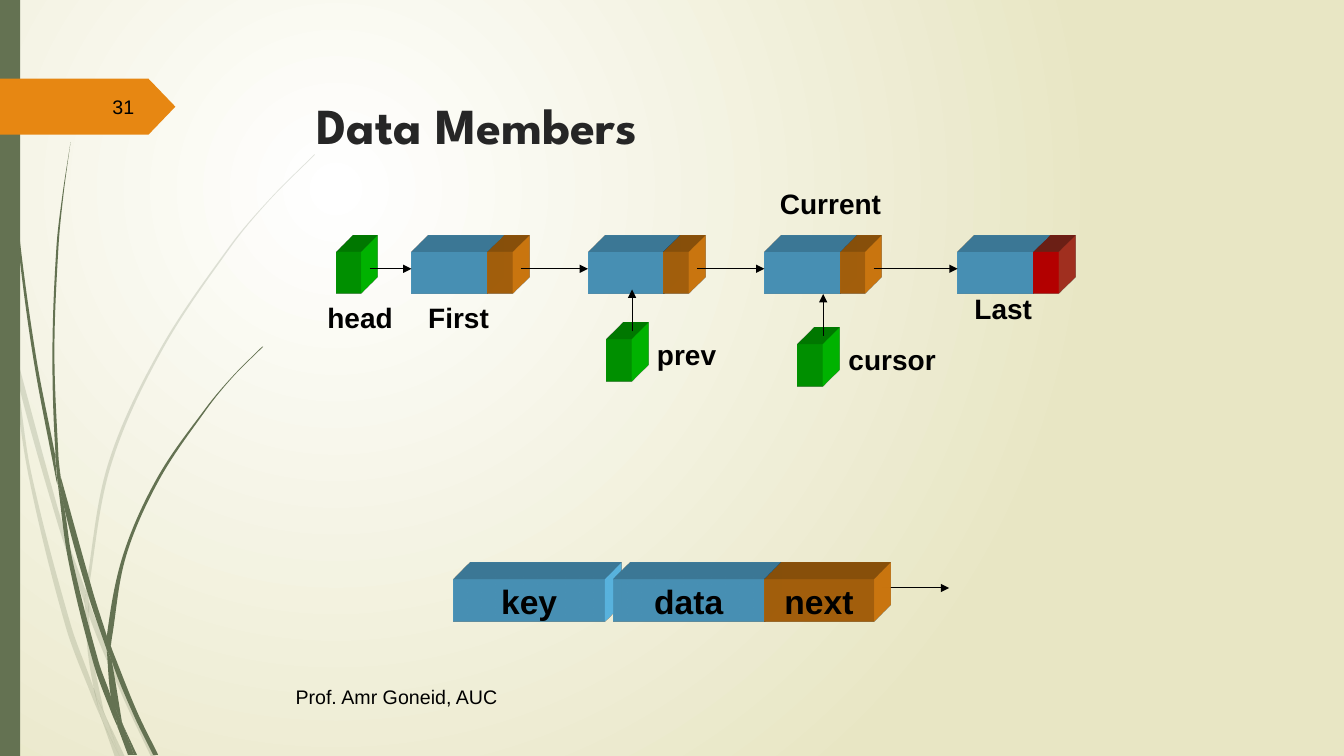
from dataclasses import dataclass
from math import dist

from lxml import etree
from pptx import Presentation
from pptx.dml.color import RGBColor
from pptx.enum.shapes import MSO_CONNECTOR, MSO_SHAPE
from pptx.enum.text import MSO_ANCHOR, MSO_AUTO_SIZE, PP_ALIGN
from pptx.oxml.ns import qn
from pptx.util import Pt

RECTANGLE, PENTAGON = MSO_SHAPE.RECTANGLE, MSO_SHAPE.PENTAGON
STRAIGHT = MSO_CONNECTOR.STRAIGHT
TOP, MIDDLE = MSO_ANCHOR.TOP, MSO_ANCHOR.MIDDLE
LEFT, CENTER, RIGHT = PP_ALIGN.LEFT, PP_ALIGN.CENTER, PP_ALIGN.RIGHT
NO_AUTO_SIZE = MSO_AUTO_SIZE.NONE


@dataclass(frozen=True)
class Theme:
    text: str = "000000"
    title: str = "262626"
    sage: str = "647252"
    orange: str = "E78712"
    blue: str = "66CCFF"
    green: str = "00CC00"
    red: str = "FF0000"
    red_depth: str = "B83725"
    glow: str = "FFFFFF"
    sand: str = "E8E6C4"
    font: str = "Arial"
    title_font: str = "League Spartan"
    title_size: int = 36
    field_size: int = 24
    label_size: int = 20
    small_size: int = 14


THEME = Theme()
BLOCK_HEIGHT, POINTER_WIDTH, DATA_WIDTH = 30, 18, 54
EXTRUSION = 34
LIST_TOP = 180
GRID = 72  # points in one unit of the grass coordinates

# Each piece of grass: the points of its first edge, then those of the edge back
PALE_GRASS = [
    ([(.11, 3.5), (.09, 3.22), (0, 2.82)], [(0, 2.99), (.1, 3.44), (.11, 3.5)]),
    ([(.14, 3.45), (.17, 3.76), (.58, 5.22), (.84, 5.99)], [(.85, 5.86), (.62, 5.2), (.14, 3.45)]),
    ([(.88, 5.96), (.88, 6.1), (1.23, 6.94), (1.5, 7.51)],
     [(1.55, 7.51), (1.27, 6.92), (.92, 6.07), (.88, 5.96)]),
    ([(1.05, 7.11), (1.19, 7.51)], [(1.24, 7.51), (1.05, 7.11)]),
    ([(.11, 3.5), (.28, 4.7), (.65, 6.21), (.92, 6.93), (1.01, 7.14)],
     [(.99, 7.07), (.93, 6.83), (.7, 6.19), (.31, 4.69), (.17, 3.76), (.11, 3.5)]),
    ([(.84, 5.99), (.87, 6.46), (.93, 6.83), (.96, 6.92), (1.05, 7.11)],
     [(1.03, 7.06), (.91, 6.46), (.88, 6.1), (.84, 5.99)]),
    ([(.88, 5.96), (.88, 5.84), (1.1, 4.62), (1.6, 3.49), (2.29, 2.45), (2.68, 1.98), (3.12, 1.54)],
     [(3.12, 1.53), (2.68, 1.97), (2.28, 2.44), (1.58, 3.48), (1.07, 4.61), (.85, 5.84), (.85, 5.86)]),
    ([(1.01, 7.14), (1.14, 7.51)], [(1.19, 7.51), (1.01, 7.14)]),
    ([(.88, 6.08), (.88, 6.1), (.88, 5.96)], [(.85, 5.86), (.84, 5.99), (.88, 6.08)]),
    ([(.96, 6.92), (.93, 6.83), (.99, 7.07), (1.01, 7.14), (1.19, 7.51)],
     [(1.19, 7.51), (1.05, 7.11), (.96, 6.92)]),
]
DARK_GRASS = [
    ([(.03, 0), (.04, .48), (.07, 1.1), (.17, 2.33), (.33, 3.55), (.56, 4.77), (.57, 4.81)],
     [(.55, 4.57), (.55, 4.53), (.36, 3.55), (.19, 2.32), (.08, 1.09), (.05, .48), (.04, 0)]),
    ([(.6, 4.72), (.64, 5.05), (.88, 5.92), (1.06, 6.45)],
     [(1.06, 6.33), (1.06, 6.31), (.93, 5.9), (.6, 4.72)]),
    ([(1.1, 6.41), (1.11, 6.56), (1.32, 7.08), (1.52, 7.49)],
     [(1.57, 7.49), (1.36, 7.06), (1.13, 6.49), (1.1, 6.41)]),
    ([(.57, 4.77), (.68, 5.57), (.93, 6.59), (1.11, 7.08), (1.17, 7.22)],
     [(1.16, 7.17), (1.1, 6.91), (.98, 6.57), (.72, 5.56), (.64, 5.05), (.57, 4.77)]),
    ([(.6, 4.72), (.58, 4.53), (.54, 3.49), (.58, 2.45), (.63, 1.93), (.7, 1.41)],
     [(.7, 1.41), (.62, 1.93), (.56, 2.45), (.52, 3.49), (.55, 4.49), (.6, 4.72)]),
    ([(1.22, 7.19), (1.33, 7.49)], [(1.36, 7.49), (1.22, 7.19)]),
    ([(.57, 4.77), (.64, 5.05)], [(.6, 4.72), (.55, 4.49), (.55, 4.53), (.57, 4.77)]),
    ([(1.1, 6.41), (1.11, 6.33), (1.25, 5.52), (1.58, 4.76), (2.05, 4.06), (2.31, 3.74), (2.61, 3.44)],
     [(2.6, 3.44), (2.31, 3.73), (2.04, 4.05), (1.56, 4.74), (1.22, 5.51), (1.06, 6.31), (1.1, 6.41)]),
    ([(1.17, 7.22), (1.27, 7.49)], [(1.31, 7.49), (1.17, 7.22)]),
    ([(1.06, 6.45), (1.1, 6.91), (1.16, 7.06), (1.22, 7.19)],
     [(1.21, 7.16), (1.11, 6.56), (1.09, 6.51), (1.06, 6.45)]),
    ([(1.06, 6.45), (1.09, 6.51), (1.11, 6.56), (1.1, 6.41)],
     [(1.1, 6.41), (1.06, 6.31), (1.06, 6.33), (1.06, 6.45)]),
    ([(1.16, 7.06), (1.1, 6.91), (1.16, 7.17), (1.17, 7.22), (1.3, 7.49)],
     [(1.33, 7.49), (1.22, 7.19), (1.16, 7.06)]),
]


def put_text(shape, text, *, size, font=THEME.font, color=THEME.text, bold=False,
             align=LEFT, anchor=TOP, wrap=False):
    frame = shape.text_frame
    frame.auto_size = NO_AUTO_SIZE
    frame.word_wrap = wrap
    frame.vertical_anchor = anchor
    paragraph = frame.paragraphs[0]
    paragraph.alignment = align
    run = paragraph.add_run()
    run.text = text
    run.font.name, run.font.size, run.font.bold = font, Pt(size), bold
    run.font.color.rgb = RGBColor.from_string(color)


def curve_points(edge):
    """Two control points and an end point for each step of a smooth edge."""
    def control(point, before, after, reach):
        scale = reach / 3 / (dist(before, after) or 1)
        return tuple(p + (a - b) * scale for p, b, a in zip(point, before, after))

    padded = [edge[0], *edge, edge[-1]]
    points = []
    for a, b, c, d in zip(padded, padded[1:], padded[2:], padded[3:]):
        points += [control(b, a, c, dist(b, c)), control(c, d, b, dist(b, c)), c]
    return points


class SlideBuilder:
    def __init__(self, slide, theme):
        self.slide, self.theme, self.shapes = slide, theme, slide.shapes

    def background(self):
        fill = self.slide.background.fill
        fill.gradient()
        for stop, color in zip(fill.gradient_stops, (self.theme.glow, self.theme.sand)):
            stop.color.rgb = RGBColor.from_string(color)
        gradient = self.slide.element.find(".//" + qn("a:gradFill"))
        gradient.remove(gradient.find(qn("a:lin")))
        circle = etree.SubElement(gradient, qn("a:path"), path="circle")
        etree.SubElement(circle, qn("a:fillToRect"),
                         l="50000", t="50000", r="100000", b="100000")

    def paint(self, shape, color):
        shape.shadow.inherit = False
        shape.fill.solid()
        shape.fill.fore_color.rgb = RGBColor.from_string(color)
        shape.line.fill.background()
        return shape

    def preset(self, kind, left, top, width, height, color):
        shape = self.shapes.add_shape(kind, Pt(left), Pt(top), Pt(width), Pt(height))
        return self.paint(shape, color)

    def grass(self, pieces, opacity=100):
        group = self.shapes.add_group_shape()
        for forth, back in pieces:
            edges = [forth, [forth[-1], back[0]], back, [back[-1], forth[0]]]
            points = [point for edge in edges if edge[0] != edge[-1] or len(edge) > 2
                      for point in curve_points(edge)]
            builder = group.shapes.build_freeform(*(Pt(v * GRID) for v in forth[0]))
            builder.add_line_segments([(Pt(x * GRID), Pt(y * GRID)) for x, y in points])
            shape = self.paint(builder.convert_to_shape(), self.theme.sage)
            self.bend(shape)
            color = shape.element.find(".//" + qn("a:srgbClr"))
            etree.SubElement(color, qn("a:alpha"), val=str(opacity * 1000))

    def bend(self, shape):
        """Turn every three straight segments into one cubic curve."""
        outline = shape.element.find(".//" + qn("a:pathLst"))[0]
        segments = outline.findall(qn("a:lnTo"))
        for trio in zip(segments[::3], segments[1::3], segments[2::3]):
            curve = etree.SubElement(outline, qn("a:cubicBezTo"))
            for segment in trio:
                curve.append(segment[0])
                outline.remove(segment)
        etree.SubElement(outline, qn("a:close"))

    def block(self, left, top, width, color, text=None, depth_color=None):
        face = self.preset(RECTANGLE, left, top, width, BLOCK_HEIGHT, color)
        properties = face.element.spPr
        scene = etree.SubElement(properties, qn("a:scene3d"))
        etree.SubElement(scene, qn("a:camera"), prst="legacyObliqueTopRight")
        etree.SubElement(scene, qn("a:lightRig"), rig="legacyFlat3", dir="b")
        solid = etree.SubElement(properties, qn("a:sp3d"), extrusionH=str(Pt(EXTRUSION)),
                                 prstMaterial="legacyMatte")
        extrusion = etree.SubElement(solid, qn("a:extrusionClr"))
        etree.SubElement(extrusion, qn("a:srgbClr"), val=depth_color or color)
        if text:
            put_text(face, text, size=self.theme.field_size, bold=True,
                     align=CENTER, anchor=MIDDLE)

    def arrow(self, x1, y1, x2, y2):
        line = self.shapes.add_connector(STRAIGHT, Pt(x1), Pt(y1), Pt(x2), Pt(y2))
        line.line.width = Pt(0.75)
        line.line.color.rgb = RGBColor.from_string(self.theme.text)
        properties = line.element.spPr
        etree.SubElement(properties.find(qn("a:ln")), qn("a:tailEnd"), type="triangle")
        etree.SubElement(properties, qn("a:effectLst"))

    def text(self, text, left, top, width, height, **style):
        box = self.shapes.add_textbox(Pt(left), Pt(top), Pt(width), Pt(height))
        put_text(box, text, **style)

    def title(self, text):
        title = self.shapes.title
        title.left, title.top, title.width, title.height = Pt(219), Pt(63.5), Pt(612), Pt(72)
        put_text(title, text, size=self.theme.title_size, font=self.theme.title_font,
                 color=self.theme.title, bold=True, wrap=True)


def main():
    presentation = Presentation()
    presentation.slide_width, presentation.slide_height = Pt(960), Pt(540)
    page = SlideBuilder(presentation.slides.add_slide(presentation.slide_layouts[5]), THEME)

    page.background()
    page.grass(PALE_GRASS, opacity=20)
    page.grass(DARK_GRASS)
    page.preset(RECTANGLE, 0, 0, 14.4, 540, THEME.sage)
    tag = page.preset(PENTAGON, 0, 56.2, 125.3, 40, THEME.orange)
    tag.adjustments[0] = 0.48
    page.text("Prof. Amr Goneid, AUC", 204, 483, 600, 29, size=THEME.small_size, anchor=MIDDLE)
    page.text("31", 42, 62, 61, 29, size=THEME.small_size, align=RIGHT, anchor=MIDDLE)
    page.title("Data Members")

    # Linked list
    node_lefts = [294, 420, 546, 684]
    for left in node_lefts:
        last = left == node_lefts[-1]
        page.block(left, LIST_TOP, DATA_WIDTH, THEME.blue)
        page.block(left + DATA_WIDTH, LIST_TOP, POINTER_WIDTH, THEME.red if last else THEME.orange,
                   depth_color=THEME.red_depth if last else None)
    page.block(240, LIST_TOP, POINTER_WIDTH, THEME.green)
    for start, end in zip([264] + [left + 78 for left in node_lefts], node_lefts):
        page.arrow(start, LIST_TOP + 12, end, LIST_TOP + 12)

    # Pointers from below
    for left, top in [(433.5, 242.75), (570, 246)]:
        page.block(left, top, POINTER_WIDTH, THEME.green)
        page.arrow(left + POINTER_WIDTH, top - 6, left + POINTER_WIDTH, top - 36)

    for text, left, top, width in [
            ("head", 226.8, 211, 61), ("First", 298.8, 211, 58), ("Last", 689, 205, 55),
            ("prev", 462.2, 237.6, 57), ("cursor", 599, 241.2, 77), ("Current", 550, 129.6, 86)]:
        page.text(text, left, top, width, 31, size=THEME.label_size, bold=True)

    # Node layout
    page.arrow(630, 420, 678, 420)
    for text, left, width, color in [("key", 324, 108, THEME.blue), ("data", 438, 108, THEME.blue),
                                     ("next", 546, 78, THEME.orange)]:
        page.block(left, 414, width, color, text)

    presentation.save("out.pptx")


if __name__ == "__main__":
    main()
